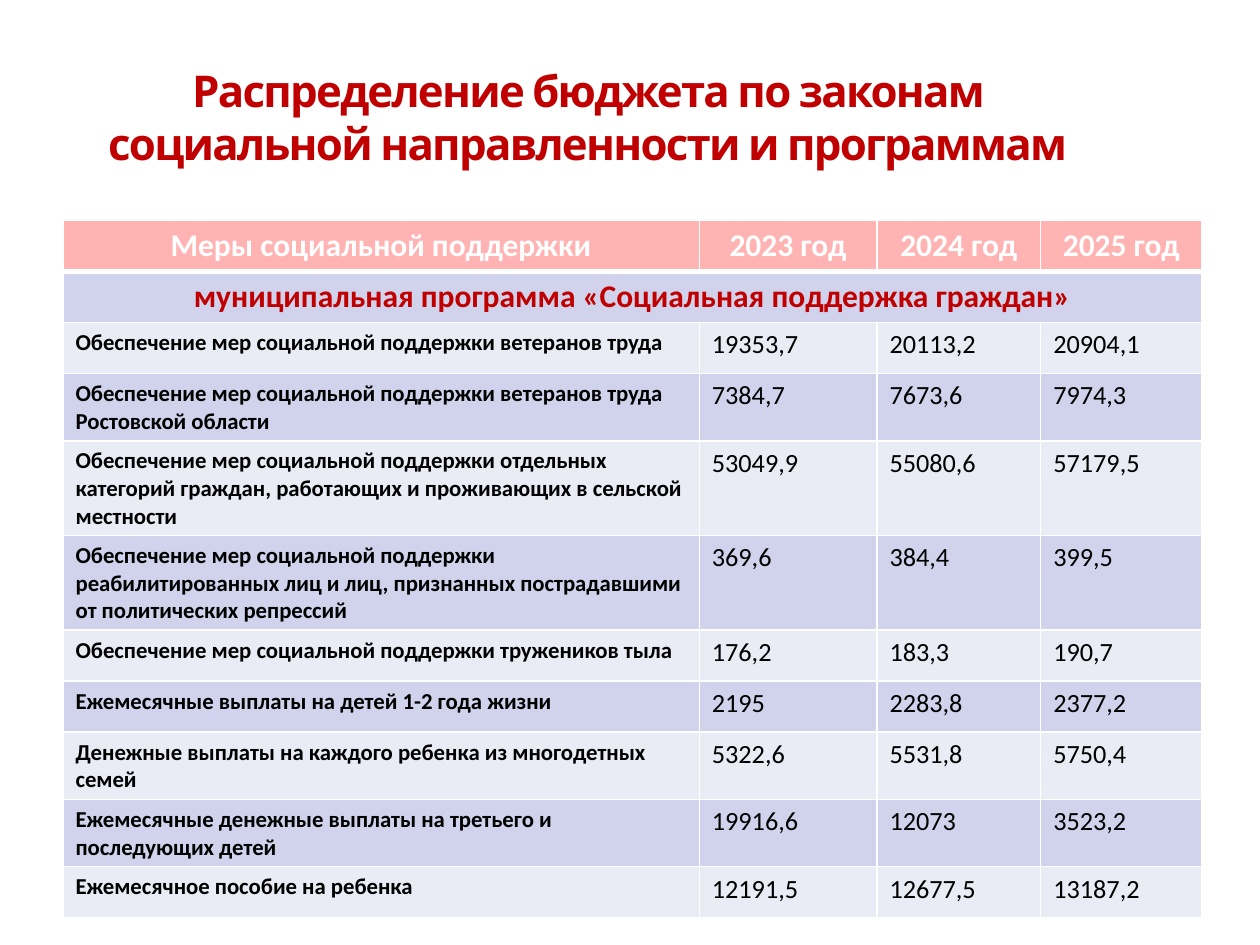
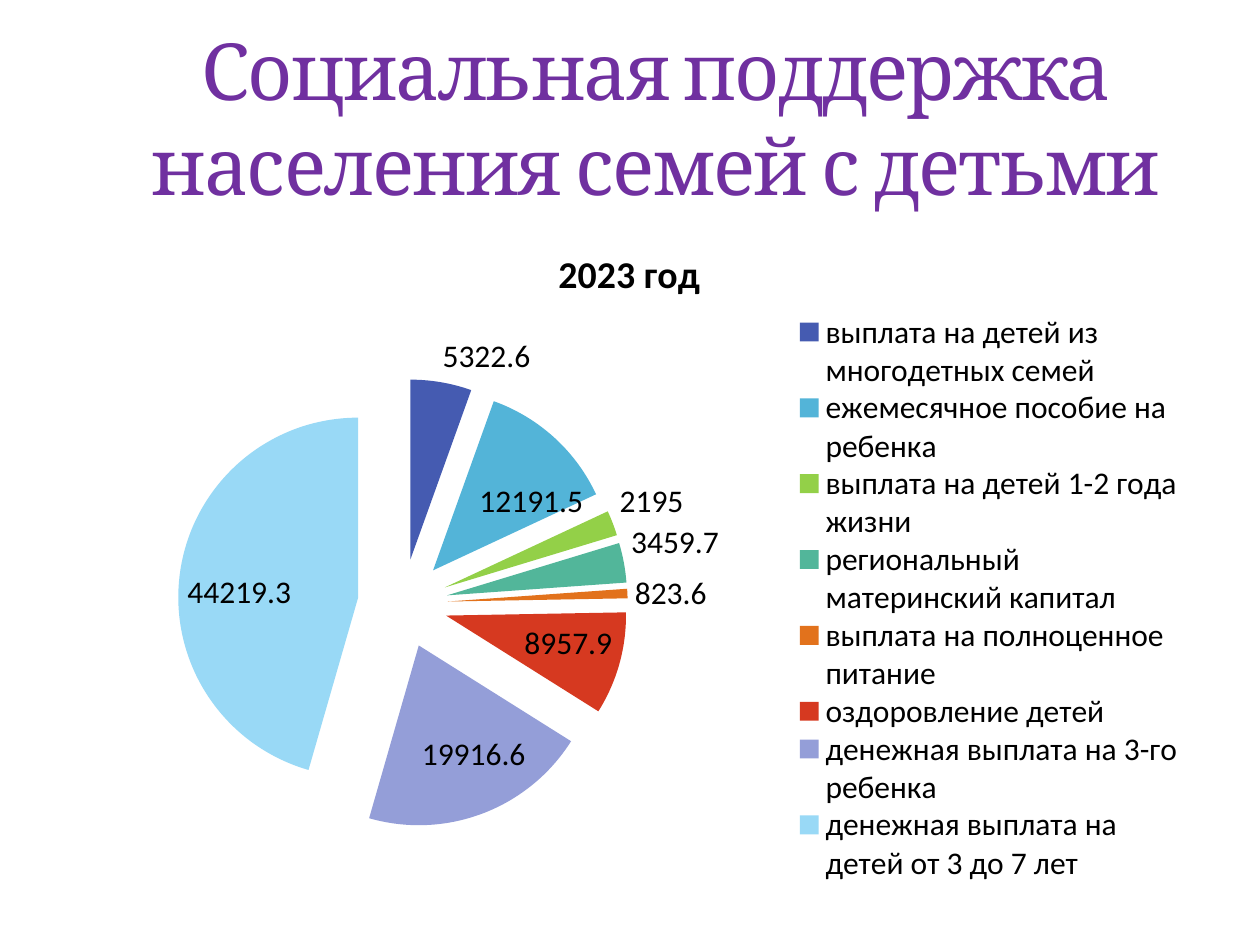
from pptx import Presentation
from pptx.chart.data import CategoryChartData
from pptx.dml.color import RGBColor
from pptx.enum.chart import XL_CHART_TYPE, XL_LABEL_POSITION, XL_LEGEND_POSITION
from pptx.enum.text import MSO_ANCHOR, PP_ALIGN
from pptx.oxml import parse_xml
from pptx.oxml.ns import nsdecls, qn
from pptx.util import Inches, Pt

# The slide is a grid of 20 columns by 30 rows.
SLIDE_W, SLIDE_H = Inches(10), Inches(7.5)
COL, ROW = SLIDE_W // 20, SLIDE_H // 30
LEFT, TITLE_TOP, TITLE_ROWS, BODY_TOP = 1, 1.2, 5, 7

WHITE = RGBColor(0xFF, 0xFF, 0xFF)
BLACK = RGBColor(0x00, 0x00, 0x00)
DARK_RED = RGBColor(0xC0, 0x00, 0x00)
PURPLE = RGBColor(0x70, 0x30, 0xA0)
HEADER_PINK = RGBColor(0xFF, 0xB3, 0xB3)
BANDS = (RGBColor(0xD0, 0xD3, 0xEB), RGBColor(0xE9, 0xEB, 0xF5))
SLICE_COLORS = (
    RGBColor(0x45, 0x5B, 0xB1), RGBColor(0x53, 0xB4, 0xD8),
    RGBColor(0x93, 0xD0, 0x48), RGBColor(0x52, 0xB6, 0x9A),
    RGBColor(0xE2, 0x72, 0x1C), RGBColor(0xD6, 0x39, 0x20),
    RGBColor(0x94, 0x9E, 0xD8), RGBColor(0x99, 0xD9, 0xF6),
)
BODY_FONT = "Calibri"

HEADERS = ("Меры социальной поддержки", "2023 год", "2024 год", "2025 год")
PROGRAM = "муниципальная программа «Социальная поддержка граждан»"
MEASURES = (
    ("Обеспечение мер социальной поддержки ветеранов труда",
     "19353,7", "20113,2", "20904,1"),
    ("Обеспечение мер социальной поддержки ветеранов труда\nРостовской области",
     "7384,7", "7673,6", "7974,3"),
    ("Обеспечение мер социальной поддержки отдельных категорий граждан, "
     "работающих и проживающих в сельской местности",
     "53049,9", "55080,6", "57179,5"),
    ("Обеспечение мер социальной поддержки реабилитированных лиц и лиц, "
     "признанных пострадавшими от политических репрессий",
     "369,6", "384,4", "399,5"),
    ("Обеспечение мер социальной поддержки тружеников тыла",
     "176,2", "183,3", "190,7"),
    ("Ежемесячные выплаты на детей 1-2 года жизни",
     "2195", "2283,8", "2377,2"),
    ("Денежные выплаты на каждого ребенка из многодетных семей",
     "5322,6", "5531,8", "5750,4"),
    ("Ежемесячные денежные выплаты на третьего и последующих детей",
     "19916,6", "12073", "3523,2"),
    ("Ежемесячное пособие на ребенка",
     "12191,5", "12677,5", "13187,2"),
)
TABLE_COLS = (10.1, 2.82, 2.6, 2.56)
TABLE_ROW = 1.62

PAYMENTS = {
    "выплата на детей из многодетных семей": 5322.6,
    "ежемесячное пособие на ребенка": 12191.5,
    "выплата на детей 1-2 года жизни": 2195,
    "региональный материнский капитал": 3459.7,
    "выплата на полноценное питание": 823.6,
    "оздоровление детей": 8957.9,
    "денежная выплата на 3-го ребенка": 19916.6,
    "денежная выплата на детей от 3 до 7 лет": 44219.3,
}
EXPLOSION = 25
INSIDE_FROM = 8000  # larger values are labelled inside their slices
# Shares of the chart: left, top, width, height
PIE_AREA = (0.1, 0.24, 0.4, 0.68)
LEGEND_AREA = (0.65, 0.14, 0.34, 0.86)
LABEL_SHIFTS = {1: (0.03, 0.06), 6: (0.04, -0.05)}


def area(left, top, width, height):
    """Turn grid columns and rows into slide lengths."""
    return int(left * COL), int(top * ROW), int(width * COL), int(height * ROW)


def set_font(font, size, color, name=BODY_FONT, bold=False):
    font.size, font.name, font.bold = Pt(size), name, bold
    font.color.rgb = color


def add_title(slide, text, width, size, color, name, bold=False, indent=0):
    """Add a centred, tightly set title; indent shifts it right, in columns."""
    sp = slide.shapes.add_textbox(*area(LEFT, TITLE_TOP, width, TITLE_ROWS))
    tf = sp.text_frame
    tf.word_wrap = True
    tf.vertical_anchor = MSO_ANCHOR.MIDDLE
    tf.margin_left += int(indent * COL)
    p = tf.paragraphs[0]
    p.text = text
    p.alignment = PP_ALIGN.CENTER
    set_font(p.font, size, color, name, bold)
    for r in p.runs:
        r.font._element.set("spc", "-100")


def set_borders(cell, bottom=1):
    """Draw white cell borders, 1 pt except for the given bottom width."""
    tc_pr = cell._tc.get_or_add_tcPr()
    for i, (side, width) in enumerate(zip("LRTB", (1, 1, 1, bottom))):
        line = parse_xml(
            f'<a:ln{side} {nsdecls("a")} w="{Pt(width)}"><a:solidFill>'
            f'<a:srgbClr val="{WHITE}"/></a:solidFill></a:ln{side}>')
        tc_pr.insert(i, line)


def fill_cell(cell, text, fill, size, color, bold=False, align=PP_ALIGN.LEFT, bottom=1):
    cell.fill.solid()
    cell.fill.fore_color.rgb = fill
    set_borders(cell, bottom)
    cell.text_frame.text = text
    for p in cell.text_frame.paragraphs:
        p.alignment = align
        set_font(p.font, size, color, bold=bold)


def add_measures_table(slide):
    n_rows = len(MEASURES) + 2
    frame = slide.shapes.add_table(
        n_rows, len(HEADERS),
        *area(LEFT, BODY_TOP, sum(TABLE_COLS), TABLE_ROW * n_rows))
    table = frame.table
    for column, width in zip(table.columns, TABLE_COLS):
        column.width = int(width * COL)

    for c, text in enumerate(HEADERS):
        fill_cell(table.cell(0, c), text, HEADER_PINK, 18, WHITE, True,
                  PP_ALIGN.CENTER, bottom=3)
    program = table.cell(1, 0)
    program.merge(table.cell(1, len(HEADERS) - 1))
    fill_cell(program, PROGRAM, BANDS[0], 18, DARK_RED, True, PP_ALIGN.CENTER)
    for r, (measure, *amounts) in enumerate(MEASURES, start=2):
        band = BANDS[(r - 1) % 2]
        fill_cell(table.cell(r, 0), measure, band, 13, BLACK, True)
        for c, amount in enumerate(amounts, start=1):
            fill_cell(table.cell(r, c), amount, band, 15, BLACK)


def manual_layout(**settings):
    """Build a chart layout from its settings, given in schema order."""
    parts = "".join(f'<c:{key} val="{val}"/>' for key, val in settings.items())
    return parse_xml(f'<c:layout {nsdecls("c")}><c:manualLayout>{parts}'
                     '</c:manualLayout></c:layout>')


def place(element, box, after=None, **target):
    """Fix a chart part to a box, in place of its automatic layout."""
    old = element.find(qn("c:layout"))
    if old is not None:
        element.remove(old)
    x, y, w, h = box
    layout = manual_layout(**target, xMode="edge", yMode="edge", x=x, y=y, w=w, h=h)
    if after is None:
        element.insert(0, layout)
    else:
        element.find(qn(after)).addnext(layout)


def explode(series):
    """Pull all slices of a pie series apart."""
    def explosion():
        return parse_xml(f'<c:explosion {nsdecls("c")} val="{EXPLOSION}"/>')

    points = series._element.findall(qn("c:dPt"))
    points[0].addprevious(explosion())
    for point in points:
        point.find(qn("c:spPr")).addprevious(explosion())


def label_slices(series):
    for i, value in enumerate(PAYMENTS.values()):
        label = series.points[i].data_label
        set_font(label.font, 18, BLACK)
        label.position = (XL_LABEL_POSITION.INSIDE_END if value > INSIDE_FROM
                          else XL_LABEL_POSITION.OUTSIDE_END)
    labels = series.data_labels
    labels.show_value = True
    set_font(labels.font, 18, BLACK)
    for label in labels._element.findall(qn("c:dLbl")):
        idx = label.find(qn("c:idx"))
        shift = LABEL_SHIFTS.get(int(idx.get("val")))
        if shift:
            idx.addnext(manual_layout(x=shift[0], y=shift[1]))


def add_payments_pie(slide):
    data = CategoryChartData()
    data.categories = list(PAYMENTS)
    data.add_series("2023 год", list(PAYMENTS.values()))
    chart = slide.shapes.add_chart(
        XL_CHART_TYPE.PIE, *area(LEFT, BODY_TOP, 17.98, 21), data).chart
    set_font(chart.font, 18, BLACK)

    chart.has_title = True
    p = chart.chart_title.text_frame.paragraphs[0]
    p.text = "2023 год"
    set_font(p.font, 21.6, BLACK, bold=True)

    chart.has_legend = True
    chart.legend.position = XL_LEGEND_POSITION.RIGHT
    chart.legend.include_in_layout = False
    place(chart.legend._element, LEGEND_AREA, after="c:legendPos")

    plot = chart.plots[0]
    plot.vary_by_categories = True
    place(plot._element.getparent(), PIE_AREA, layoutTarget="inner")

    series = plot.series[0]
    for i, color in enumerate(SLICE_COLORS):
        fill = series.points[i].format.fill
        fill.solid()
        fill.fore_color.rgb = color
    explode(series)
    label_slices(series)


def main():
    prs = Presentation()
    prs.slide_width, prs.slide_height = SLIDE_W, SLIDE_H
    blank = prs.slide_layouts[6]

    s = prs.slides.add_slide(blank)
    add_title(s, "Распределение бюджета по законам социальной направленности и программам",
              16.66, 25, DARK_RED, "Karla", bold=True)
    add_measures_table(s)

    s = prs.slides.add_slide(blank)
    add_title(s, "Социальная поддержка\vнаселения семей с детьми",
              17.82, 45, PURPLE, "Cambria", indent=1)
    add_payments_pie(s)

    prs.save("out.pptx")


if __name__ == "__main__":
    main()
